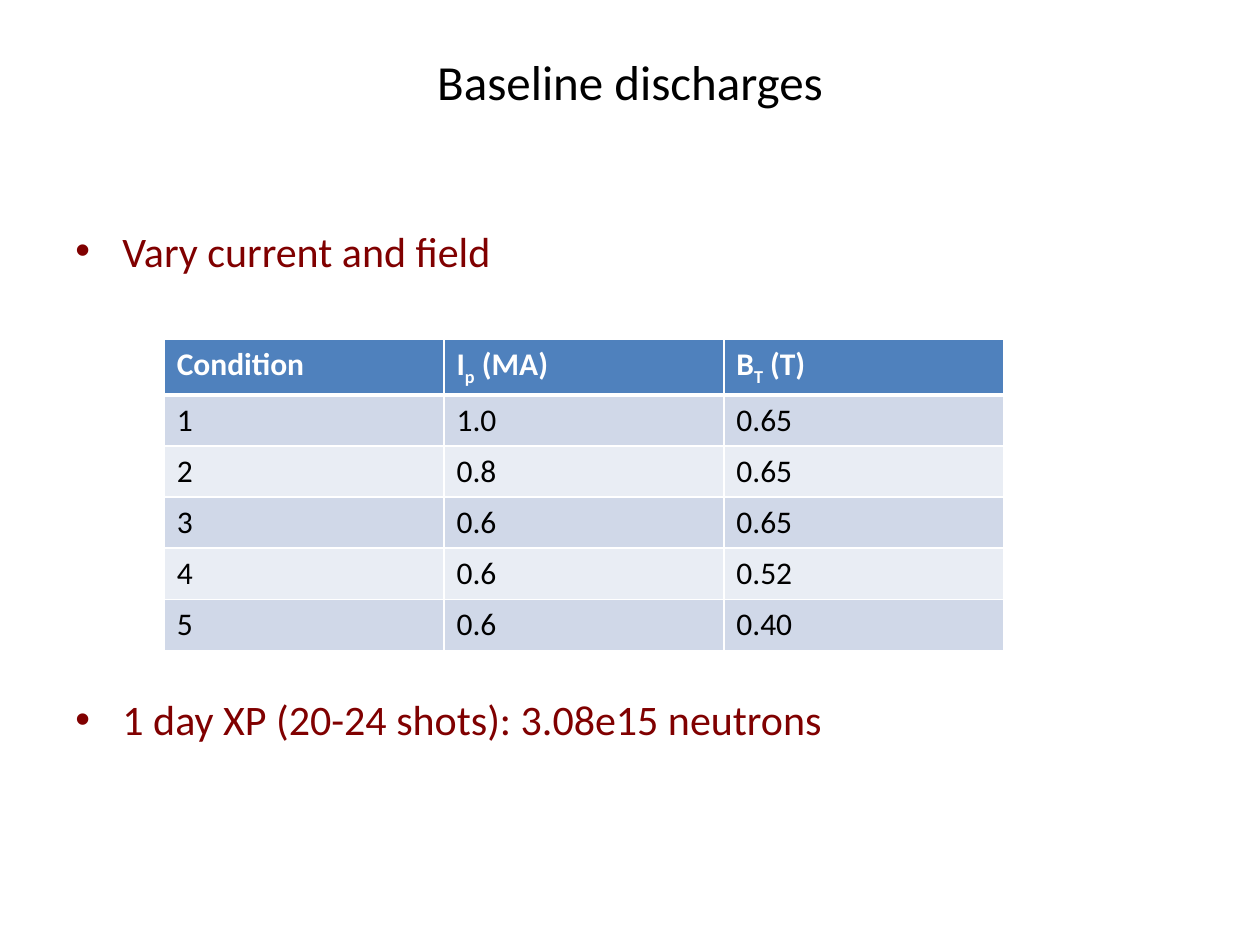
from lxml import etree
from pptx import Presentation, util as u
from pptx.dml.color import RGBColor
from pptx.enum import text
from pptx.oxml import ns

BLACK = RGBColor(0x00, 0x00, 0x00)
WHITE = RGBColor(0xFF, 0xFF, 0xFF)
MAROON = RGBColor(0x80, 0x00, 0x00)
HEADER_BLUE = RGBColor(0x4F, 0x81, 0xBD)
BANDS = (RGBColor(0xD0, 0xD8, 0xE8), RGBColor(0xE9, 0xED, 0xF4))

TITLE = dict(size=u.Pt(28), color=BLACK)
BULLET = dict(size=u.Pt(24), color=MAROON)
HEADER = dict(size=u.Pt(18), color=WHITE, bold=True)
BODY = dict(size=u.Pt(18), color=BLACK, bold=False)


class Deck:
    """Holds the font and the current slide."""

    font = "Calibri"

    def __init__(self, width, height):
        self.prs = Presentation()
        self.prs.slide_width, self.prs.slide_height = width, height
        self.slide = self.prs.slides.add_slide(self.prs.slide_layouts[6])

    def run(self, paragraph, words, style, baseline=None):
        run = paragraph.add_run()
        run.text = words
        run.font.name = self.font
        for name, value in style.items():
            if name == "color":
                run.font.color.rgb = value
            else:
                setattr(run.font, name, value)
        if baseline:
            run.font._element.set("baseline", str(baseline))

    def frame(self, box, **settings):
        frame = self.slide.shapes.add_textbox(*box).text_frame
        frame.word_wrap = True
        for name, value in settings.items():
            setattr(frame, name, value)
        return frame

    def title(self, box, words):
        frame = self.frame(box, vertical_anchor=text.MSO_ANCHOR.MIDDLE)
        heading = frame.paragraphs[0]
        heading.alignment = text.PP_ALIGN.CENTER
        self.run(heading, words, TITLE)

    def bullets(self, box, top_margin, indent, items):
        frame = self.frame(box, margin_top=top_margin)
        for number, (words, gap) in enumerate(items):
            item = frame.add_paragraph() if number else frame.paragraphs[0]
            item.space_before = gap
            props = item._p.get_or_add_pPr()
            props.set("marL", str(indent))
            props.set("indent", str(-indent))
            font = etree.SubElement(props, ns.qn("a:buFont"))
            font.set("typeface", "Arial")
            etree.SubElement(props, ns.qn("a:buChar")).set("char", "•")
            self.run(item, words, BULLET)

    def borders(self, cell, widths):
        props = cell._tc.get_or_add_tcPr()
        for place, (side, width) in enumerate(widths.items()):
            line = etree.Element(ns.qn(f"a:ln{side}"), w=str(u.Pt(width)))
            fill = etree.SubElement(line, ns.qn("a:solidFill"))
            etree.SubElement(fill, ns.qn("a:srgbClr")).set("val", str(WHITE))
            props.insert(place, line)

    def table(self, left, top, column_width, row_height, rows):
        columns = len(rows[0])
        table = self.slide.shapes.add_table(
            len(rows), columns, left, top,
            column_width * columns, row_height * len(rows)).table
        for r, row in enumerate(rows):
            table.rows[r].height = row_height
            for c, parts in enumerate(row):
                cell = table.cell(r, c)
                cell.fill.solid()
                cell.fill.fore_color.rgb = BANDS[(r - 1) % 2] if r else HEADER_BLUE
                self.borders(cell, {"L": 1, "R": 1, "T": 3 if r == 1 else 1,
                                    "B": 1 if r else 3})
                # Every second part of a cell is a subscript
                for n, words in enumerate(parts):
                    self.run(cell.text_frame.paragraphs[0], words,
                             BODY if r else HEADER, -25000 if n % 2 else None)
        for column in table.columns:
            column.width = column_width


def main():
    deck = Deck(u.Cm(25.4), u.Cm(19.05))

    # Title
    deck.title((u.Cm(1.27), u.Cm(0.76), u.Cm(22.86), u.Cm(1.73)),
               "Baseline discharges")

    # Bullets above and below the table
    deck.bullets((u.Cm(1.27), u.Cm(3.23), u.Cm(22.86), u.Cm(15.27)),
                 u.Cm(1.31), u.Cm(0.95),
                 [("Vary current and field", u.Pt(0)),
                  ("1 day XP (20-24 shots): 3.08e15 neutrons", u.Pt(239))])

    # Discharge conditions
    conditions = [("1.0", "0.65"), ("0.8", "0.65"), ("0.6", "0.65"),
                  ("0.6", "0.52"), ("0.6", "0.40")]
    header = [("Condition",), ("I", "p", " (MA)"), ("B", "T", " (T)")]
    body = [[(str(number),), (current,), (field,)]
            for number, (current, field) in enumerate(conditions, 1)]
    deck.table(u.Cm(3.31), u.Cm(6.84), u.Cm(5.64), u.Cm(1.03), [header] + body)

    deck.prs.save("out.pptx")


if __name__ == "__main__":
    main()
